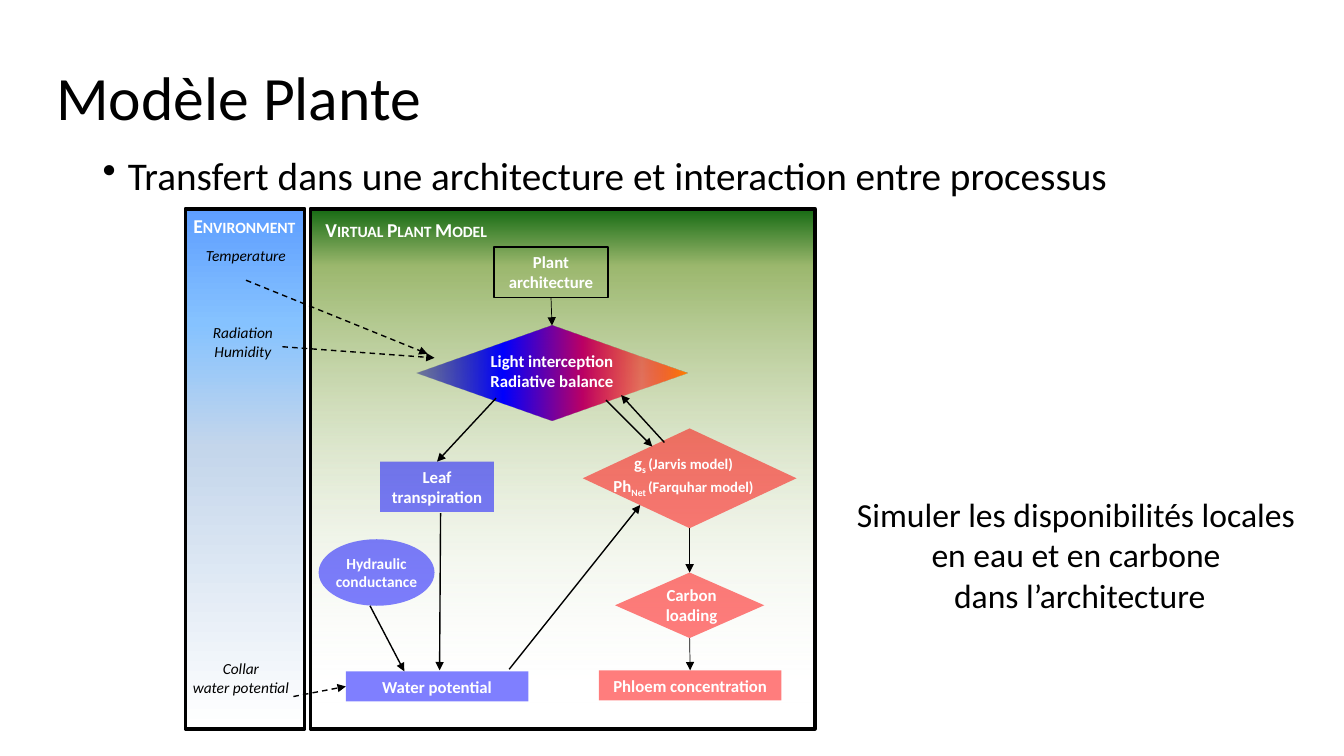
from dataclasses import dataclass

from lxml.etree import SubElement
from pptx import Presentation
from pptx.dml.color import RGBColor
from pptx.enum.dml import MSO_LINE
from pptx.enum.shapes import MSO_CONNECTOR, MSO_SHAPE
from pptx.enum.text import MSO_ANCHOR, PP_ALIGN
from pptx.oxml.ns import qn
from pptx.util import Emu, Pt

PX = 9144  # 100 px to the inch
TOP, LEFT, BOTTOM = 0, 1, 2
RECT, OVAL, RHOMB = MSO_SHAPE.RECTANGLE, MSO_SHAPE.OVAL, MSO_SHAPE.DIAMOND


@dataclass(frozen=True)
class Theme:
    font: str = "Calibri"
    ink: str = "000000"
    pale: str = "FFFFFF"
    # Each fill is a list of (position, colour, opacity) stops.
    water: tuple = ((0, "0000FF", 50),)
    carbon: tuple = ((0, "FF0000", 51),)
    sky: tuple = ((0, "5E9EFF", 100), (22, "85C2FF", 100),
                  (46, "C4D6EB", 100), (100, "FFFFFF", 100))
    leaf: tuple = ((0, "156B13", 100), (11, "9CB86E", 100), (95, "FFFFFF", 0))
    light: tuple = ((0, "000082", 42), (32, "0000FF", 100), (61, "BA0066", 100),
                    (83, "FF0000", 47), (100, "FF8200", 100))
    title: int = 44
    body: int = 28
    goal: int = 24
    head: int = 14
    node: int = 12
    note: int = 11
    cite: float = 10.5
    frame: float = 2.75
    line: float = 1
    thin: float = 0.5


class Board:
    def __init__(self, slide, theme):
        self.slide, self.theme = slide, theme

    def label(self, frame, text, size, color, bold=False, italic=False,
              align=PP_ALIGN.CENTER, anchor=MSO_ANCHOR.TOP, pad=(10, 5, 10, 5), wrap=True):
        """Set one paragraph per line of text and return the paragraphs."""
        frame.word_wrap, frame.vertical_anchor = wrap, anchor
        (frame.margin_left, frame.margin_top,
         frame.margin_right, frame.margin_bottom) = [Emu(n * PX) for n in pad]
        frame.text = text
        for para in frame.paragraphs:
            para.alignment = align
            font = para.font
            font.name, font.size = self.theme.font, Pt(size)
            font.bold, font.italic = bold, italic
            font.color.rgb = RGBColor.from_string(color)
        return frame.paragraphs

    def text(self, box, text, size, color=None, **style):
        shape = self.slide.shapes.add_textbox(*[Emu(n * PX) for n in box])
        return self.label(shape.text_frame, text, size, color or self.theme.ink, **style)

    def head(self, box, text):
        style = self.theme
        para, = self.text(box, text, style.head, style.pale, bold=True, align=PP_ALIGN.LEFT)
        para.runs[0]._r.get_or_add_rPr().set("cap", "small")

    def paint(self, shape, stops, angle):
        """Fill with one colour or a gradient, with opacity."""
        if len(stops) == 1:
            shape.fill.solid()
            shape.fill.fore_color.rgb = RGBColor.from_string(stops[0][1])
            colors = [shape._element.spPr.find(qn("a:solidFill"))[0]]
        else:
            shape.fill.gradient()
            shape.fill.gradient_angle = -angle % 360
            ramp = shape._element.spPr.find(qn("a:gradFill")).find(qn("a:gsLst"))
            ramp[:] = []
            colors = []
            for place, color, _ in stops:
                stop = SubElement(ramp, qn("a:gs"), pos=str(place * 1000))
                colors.append(SubElement(stop, qn("a:srgbClr"), val=color))
        for node, (_, _, alpha) in zip(colors, stops):
            if alpha < 100:
                SubElement(node, qn("a:alpha"), val=str(alpha * 1000))

    def shape(self, kind, box, fill=None, angle=0, line=None):
        shape = self.slide.shapes.add_shape(kind, *[Emu(n * PX) for n in box])
        shape.shadow.inherit = False
        if fill:
            self.paint(shape, fill, angle)
        else:
            shape.fill.background()
        if line:
            shape.line.color.rgb = RGBColor.from_string(self.theme.ink)
            shape.line.width = Pt(line)
        else:
            shape.line.fill.background()
        return shape

    def node(self, kind, box, text, fill=None, line=None, size=None, **style):
        shape = self.shape(kind, box, fill, line=line)
        self.label(shape.text_frame, text, size or self.theme.node,
                   self.theme.pale, bold=True, **style)
        return shape

    def note(self, box, text, pad=(10, 5, 10, 5)):
        shape = self.shape(OVAL, box)
        self.label(shape.text_frame, text, self.theme.note, self.theme.ink,
                   italic=True, anchor=MSO_ANCHOR.MIDDLE, pad=pad)

    def arrow(self, start, end, width=None, dash=False):
        """Each end is an (x, y) point or a (shape, side) pair."""
        link = self.slide.shapes.add_connector(MSO_CONNECTOR.STRAIGHT, 0, 0, 0, 0)
        if isinstance(start[0], int):
            link.begin_x, link.begin_y = [Emu(n * PX) for n in start]
        else:
            link.begin_connect(*start)
        if isinstance(end[0], int):
            link.end_x, link.end_y = [Emu(n * PX) for n in end]
        else:
            link.end_connect(*end)
        link.line.color.rgb = RGBColor.from_string(self.theme.ink)
        link.line.width = Pt(width or self.theme.line)
        if dash:
            link.line.dash_style = MSO_LINE.DASH
        props = link._element.spPr
        SubElement(props.find(qn("a:ln")), qn("a:tailEnd"), type="triangle")
        SubElement(props, qn("a:effectLst"))

    def model(self, para, name, sub, cite):
        """Add a symbol, its subscript and the model it comes from."""
        for text, size, base in ((name, self.theme.node, 0), (sub, self.theme.node, -25000),
                                 (cite, self.theme.cite, 0)):
            run = para.add_run()
            run.text, run.font.size = text, Pt(size)
            if base:
                run._r.get_or_add_rPr().set("baseline", str(base))


def main():
    deck = Presentation()
    deck.slide_width, deck.slide_height = Emu(1333 * PX), Emu(750 * PX)
    style = Theme()
    board = Board(deck.slides.add_slide(deck.slide_layouts[6]), style)
    middle = MSO_ANCHOR.MIDDLE

    title, = board.text((46, 27, 1242, 145), "Modèle Plante", style.title,
                        align=PP_ALIGN.LEFT, anchor=middle)
    point, = board.text((92, 150, 1150, 503),
                        "Transfert dans une architecture et interaction entre processus",
                        style.body, align=PP_ALIGN.LEFT)
    title.line_spacing = point.line_spacing = 0.9
    point.space_before = Pt(10)
    props = point._p.get_or_add_pPr()
    props.set("marL", str(25 * PX))
    props.set("indent", str(-25 * PX))
    bullet = props.makeelement(qn("a:buChar"), {"char": "•"})
    props.find(qn("a:defRPr")).addprevious(bullet)

    board.shape(RECT, (184, 207, 118, 516), style.sky, 90, style.frame)
    board.shape(RECT, (308, 207, 500, 516), style.leaf, 90, style.frame)
    board.head((182, 207, 227, 34), "Environment")
    board.head((313, 211, 227, 34), "Virtual Plant Model")

    board.note((181, 229, 126, 49), "Temperature", (0, 5, 0, 5))
    board.note((154, 302, 174, 74), "Radiation\nHumidity")
    board.note((139, 640, 200, 65), "Collar\nwater potential")

    plant = board.node(RECT, (490, 245, 113, 50), "Plant architecture", line=style.line)
    leaf = board.node(RECT, (377, 458, 113, 50), "Leaf\ntranspiration", style.water)
    light = board.node(RHOMB, (413, 323, 269, 94), "Light interception\nRadiative balance",
                       style.light, anchor=middle, pad=(0, 0, 0, 5))
    board.node(OVAL, (316, 535, 115, 66), "Hydraulic conductance", style.water,
               size=style.note, anchor=middle, pad=(0, 0, 0, 0))
    water = board.node(RECT, (343, 666, 181, 30), "Water potential", style.water)
    gas = board.shape(RHOMB, (578, 425, 212, 99), style.carbon)
    load = board.shape(RHOMB, (610, 568, 148, 65), style.carbon)
    phloem = board.node(RECT, (594, 665, 181, 30), "Phloem concentration", style.carbon)

    jarvis, farquhar = board.text((576, 444, 204, 50), "\n", style.node, style.pale, bold=True)
    board.model(jarvis, "g", "s ", "(Jarvis model)")
    board.model(farquhar, "Ph", "Net ", "(Farquhar model)")
    board.text((584, 575, 204, 50), "Carbon\nloading", style.node, style.pale, bold=True)

    for upper, lower in ((plant, light), (gas, load), (load, phloem)):
        board.arrow((upper, BOTTOM), (lower, TOP), style.thin)
    for start, end in (((492, 395), (leaf, TOP)), ((601, 397), (647, 443)),
                       ((659, 439), (616, 392)), ((367, 601), (401, 666)),
                       ((505, 664), (635, 501)), ((437, 509), (436, 665))):
        board.arrow(start, end)
    for start, end in (((244, 278), (424, 351)), ((280, 344), (431, 355)),
                       ((291, 691), (water, LEFT))):
        board.arrow(start, end, dash=True)

    board.text((838, 485, 466, 131),
               "Simuler les disponibilités locales \nen eau et en carbone \ndans l’architecture",
               style.goal, wrap=False)
    deck.save("out.pptx")


if __name__ == "__main__":
    main()
